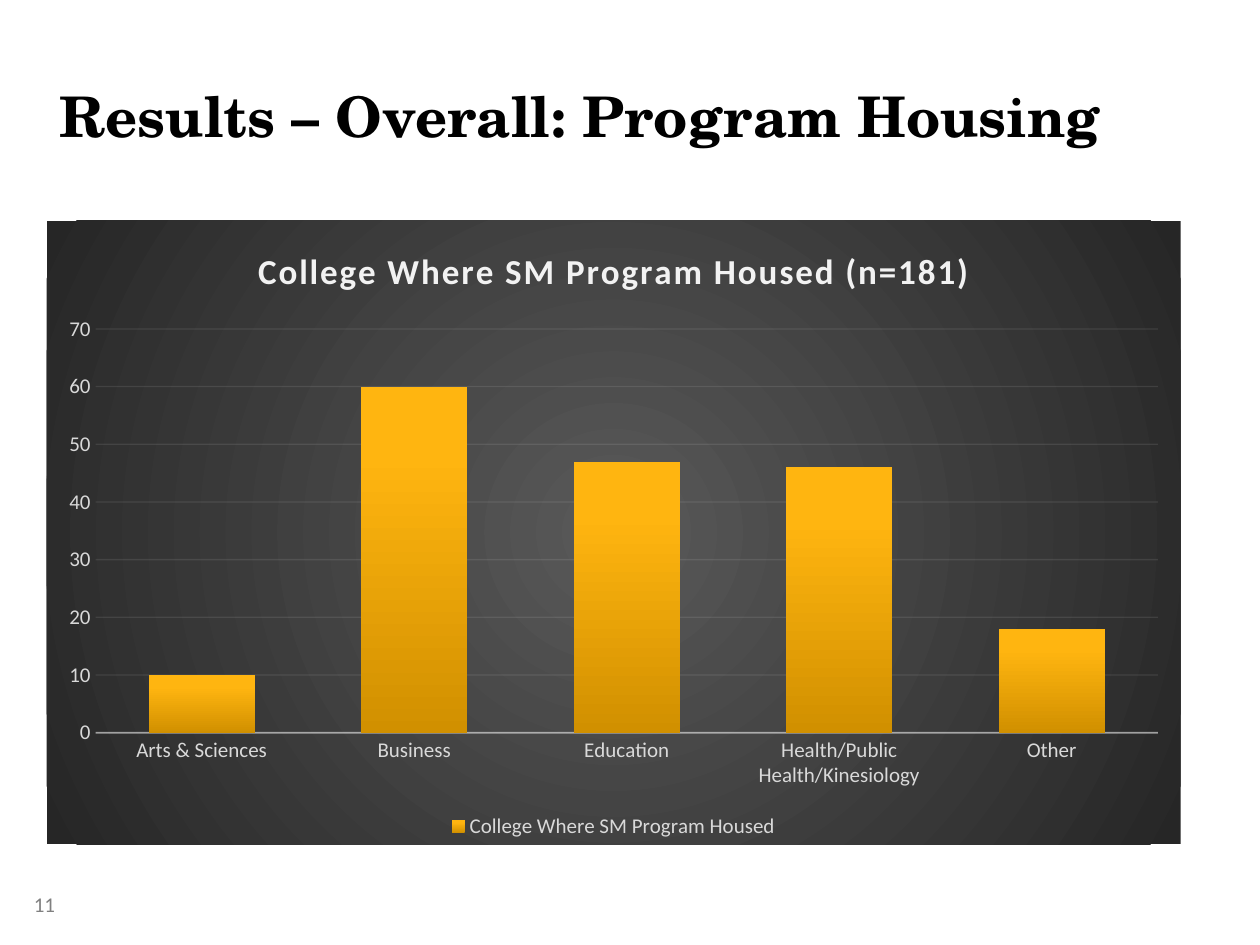
from dataclasses import dataclass
from pptx import Presentation
from pptx.chart.data import CategoryChartData
from pptx.dml.color import RGBColor
from pptx.enum.chart import XL_CHART_TYPE, XL_LEGEND_POSITION, XL_TICK_MARK
from pptx.enum.text import MSO_ANCHOR, PP_ALIGN
from pptx.oxml import parse_xml
from pptx.oxml.ns import nsdecls, qn
from pptx.util import Inches, Pt


@dataclass(frozen=True)
class Theme:
    serif: str = "TeX Gyre Schola"
    sans: str = "Calibri"
    black: str = "000000"
    gray: str = "808080"
    label: str = "D9D9D9"
    light: str = "F2F2F2"
    dark: tuple = ((0, "595959"), (100, "262626"))
    gold: tuple = ((0, "D19000"), (80, "FFB510"), (100, "FFB512"))
    head: int = 32
    title: int = 20
    small: int = 12


THEME = Theme()
WIDE, HIGH = 10, 7.5
LEFT = 0.37
HOUSED = {
    "Arts & Sciences": 10,
    "Business": 60,
    "Education": 47,
    "Health/Public Health/Kinesiology": 46,
    "Other": 18,
}


def style(font, face, size, color, bold=False):
    font.name, font.size, font.bold = face, Pt(size), bold
    font.color.rgb = RGBColor.from_string(color)


def place(shape, left, top, width, height):
    shape.left, shape.top = Inches(left), Inches(top)
    shape.width, shape.height = Inches(width), Inches(height)


def blend(stops, shade):
    """Gradient fill element from (percent, color) stops."""
    marks = "".join(
        f'<a:gs pos="{pos * 1000}"><a:srgbClr val="{color}"/></a:gs>'
        for pos, color in stops)
    return parse_xml(f'<a:gradFill {nsdecls("a")} rotWithShape="1">'
                     f'<a:gsLst>{marks}</a:gsLst>{shade}</a:gradFill>')


def rule(line, color, width, alpha):
    """Partly transparent line."""
    line.width = Pt(width)
    line.color.rgb = RGBColor.from_string(color)
    tint = line.fill._xPr.find(".//" + qn("a:srgbClr"))
    tint.append(parse_xml(f'<a:alpha {nsdecls("a")} val="{alpha * 1000}"/>'))


def add_head(slide, text):
    head = slide.shapes.title
    place(head, LEFT, 0.3, 9.3, 0.93)
    frame = head.text_frame
    frame.text = text
    frame.vertical_anchor = MSO_ANCHOR.BOTTOM
    frame.paragraphs[0].alignment = PP_ALIGN.LEFT
    style(frame.paragraphs[0].runs[0].font, THEME.serif, THEME.head,
          THEME.black, True)


def add_number(slide, text):
    box = slide.shapes.add_textbox(0, 0, 0, 0)
    place(box, 0.17, 7.03, 0.92, 0.55)
    frame = box.text_frame
    frame.word_wrap = True
    frame.text = text
    style(frame.paragraphs[0].runs[0].font, THEME.sans, THEME.small, THEME.gray)


def style_axes(chart):
    for axis in (chart.category_axis, chart.value_axis):
        axis.major_tick_mark = axis.minor_tick_mark = XL_TICK_MARK.NONE
        style(axis.tick_labels.font, THEME.sans, THEME.small, THEME.label)
    rule(chart.category_axis.format.line, THEME.light, 1, 54)
    value = chart.value_axis
    value.minimum_scale, value.maximum_scale, value.major_unit = 0, 70, 10
    value.format.line.fill.background()
    rule(value.major_gridlines.format.line, THEME.light, 0.75, 10)


def add_bars(slide, name, counts, title):
    data = CategoryChartData()
    data.categories = list(counts)
    data.add_series(name, list(counts.values()))
    chart = slide.shapes.add_chart(
        XL_CHART_TYPE.COLUMN_CLUSTERED, Inches(LEFT), Inches(1.75),
        Inches(9), Inches(4.95), data).chart
    style(chart.font, THEME.sans, 10, THEME.black)

    # Dark panel, glowing from the centre
    panel = parse_xml(f'<c:spPr {nsdecls("c", "a")}><a:ln><a:noFill/></a:ln></c:spPr>')
    panel.insert(0, blend(THEME.dark, '<a:path path="circle"><a:fillToRect '
                          'l="50000" t="50000" r="50000" b="50000"/></a:path>'))
    chart._chartSpace.find(qn("c:txPr")).addprevious(panel)

    # Title with widened letters
    chart.has_title = True
    frame = chart.chart_title.text_frame
    frame.text = title
    run = frame.paragraphs[0].runs[0]
    style(run.font, THEME.sans, THEME.title, THEME.light, True)
    run._r.get_or_add_rPr().set("spc", "100")
    chart.chart_title.include_in_layout = False

    # Legend
    chart.has_legend = True
    chart.legend.position = XL_LEGEND_POSITION.BOTTOM
    chart.legend.include_in_layout = False
    style(chart.legend.font, THEME.sans, THEME.small, THEME.label)

    # Columns
    plot = chart.plots[0]
    plot.gap_width, plot.overlap, plot.vary_by_categories = 100, -24, False
    bars = plot.series[0]
    bars.invert_if_negative = False
    bars._element.get_or_add_spPr().insert(
        0, blend(THEME.gold, '<a:lin ang="16200000" scaled="0"/>'))
    style_axes(chart)


def main():
    deck = Presentation()
    deck.slide_width, deck.slide_height = Inches(WIDE), Inches(HIGH)
    slide = deck.slides.add_slide(deck.slide_layouts[5])
    add_number(slide, "11")
    add_head(slide, "Results – Overall: Program Housing")
    add_bars(slide, "College Where SM Program Housed", HOUSED,
             "College Where SM Program Housed (n=181)")
    deck.save("out.pptx")


if __name__ == "__main__":
    main()
